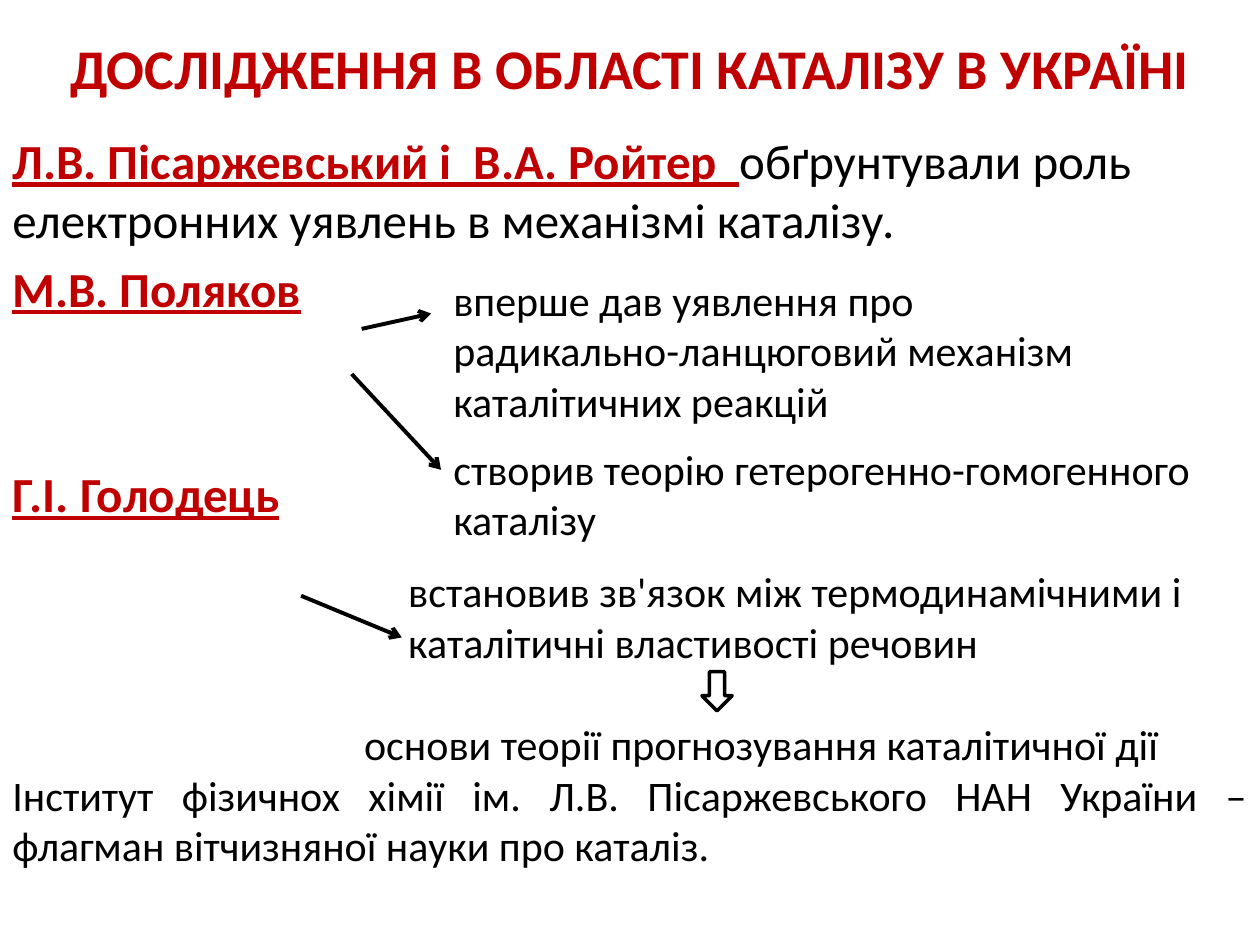
from lxml import etree
from pptx import Presentation
from pptx import util as u
from pptx.dml.color import RGBColor
from pptx.enum import shapes, text
from pptx.oxml.ns import qn

COLORS = {"accent": "C00000", "ink": "000000"}
NAME = {"size": u.Pt(28), "bold": True, "underline": True, "color": "accent"}
LEAD = {"size": u.Pt(28)}
NOTE = {"size": u.Pt(24)}
HEADING = {"size": u.Pt(32), "bold": True, "color": "accent"}


class SlideBuilder:
    font_name = "Calibri"

    def __init__(self, deck):
        self.page = deck.slides.add_slide(deck.slide_layouts[5])

    def color(self, name):
        return RGBColor.from_string(COLORS[name])

    def fill_para(self, para, spans, **layout):
        for key, value in layout.items():
            setattr(para, key, value)
        for content, style in spans:
            span = para.add_run()
            span.text = content
            values = {"name": self.font_name, **style}
            span.font.color.rgb = self.color(values.pop("color", "ink"))
            for key, value in values.items():
                setattr(span.font, key, value)

    def title(self, content, *place):
        box = self.page.shapes.title
        for key, value in zip(("left", "top", "width", "height"), place):
            setattr(box, key, u.Cm(value))
        box.text_frame.vertical_anchor = text.MSO_ANCHOR.MIDDLE
        self.fill_para(box.text_frame.paragraphs[0], [(content, HEADING)],
                       alignment=text.PP_ALIGN.CENTER)

    def text_box(self, paras, *place, wrap=True):
        frame = self.page.shapes.add_textbox(*map(u.Cm, place)).text_frame
        frame.word_wrap = wrap
        for index, (spans, layout) in enumerate(paras):
            para = frame.add_paragraph() if index else frame.paragraphs[0]
            self.fill_para(para, spans, **layout)

    def note(self, lines, *place, wrap=True):
        self.text_box([([(line, NOTE)], {}) for line in lines], *place, wrap=wrap)

    def arrow(self, *ends):
        line = self.page.shapes.add_connector(
            shapes.MSO_CONNECTOR.STRAIGHT, *map(u.Cm, ends))
        line.line.color.rgb = self.color("ink")
        line.line.width = u.Pt(2.25)
        etree.SubElement(line.line._get_or_add_ln(), qn("a:tailEnd"), type="arrow")
        etree.SubElement(line._element.spPr, qn("a:effectLst"))

    def down_arrow(self, *place):
        shape = self.page.shapes.add_shape(
            shapes.MSO_SHAPE.DOWN_ARROW, *map(u.Cm, place))
        shape.shadow.inherit = False
        shape.fill.background()
        shape.line.color.rgb = self.color("ink")
        shape.line.width = u.Pt(2)


def main():
    deck = Presentation()
    deck.slide_width, deck.slide_height = u.Cm(25.4), u.Cm(19.05)
    slide = SlideBuilder(deck)

    slide.title("ДОСЛІДЖЕННЯ В ОБЛАСТІ КАТАЛІЗУ В УКРАЇНІ", 0, 0, 25.4, 2.72)
    slide.text_box([
        ([("Л.В. Пісаржевський і  В.А. Ройтер  ", NAME),
          ("обґрунтували роль електронних уявлень в механізмі каталізу.", LEAD)],
         {"space_before": u.Pt(5.6)}),
        ([("М.В. Поляков", NAME)], {"space_before": u.Pt(5.6)}),
        ([("Г.І. Голодець", NAME)], {"space_before": u.Pt(84)}),
        ([("Інститут фізичнох хімії ім. Л.В. Пісаржевського НАН України – "
           "флагман вітчизняної науки про каталіз.", NOTE)],
         {"space_before": u.Pt(141), "alignment": text.PP_ALIGN.JUSTIFY}),
    ], 0, 2.51, 25.4, 16.54)

    slide.note(["вперше дав уявлення про",
                "радикально-ланцюговий механізм каталітичних реакцій"],
               8.89, 5.41, 14.4, 3.33)
    slide.note(["створив теорію гетерогенно-гомогенного", "каталізу"],
               8.89, 8.81, 15.39, 2.31, wrap=False)
    slide.note(["встановив зв'язок між термодинамічними і "
                "каталітичні властивості речовин"], 7.98, 11.28, 17.86, 2.31)
    slide.note(["основи теорії прогнозування каталітичної дії"],
               7.09, 14.35, 16.66, 1.27, wrap=False)

    for ends in ((7.29, 6.63, 8.69, 6.32),
                 (7.09, 7.54, 8.89, 9.47),
                 (6.07, 12.01, 8.1, 12.85)):
        slide.arrow(*ends)
    slide.down_arrow(14.15, 13.54, 0.61, 0.79)

    deck.save("out.pptx")


if __name__ == "__main__":
    main()
